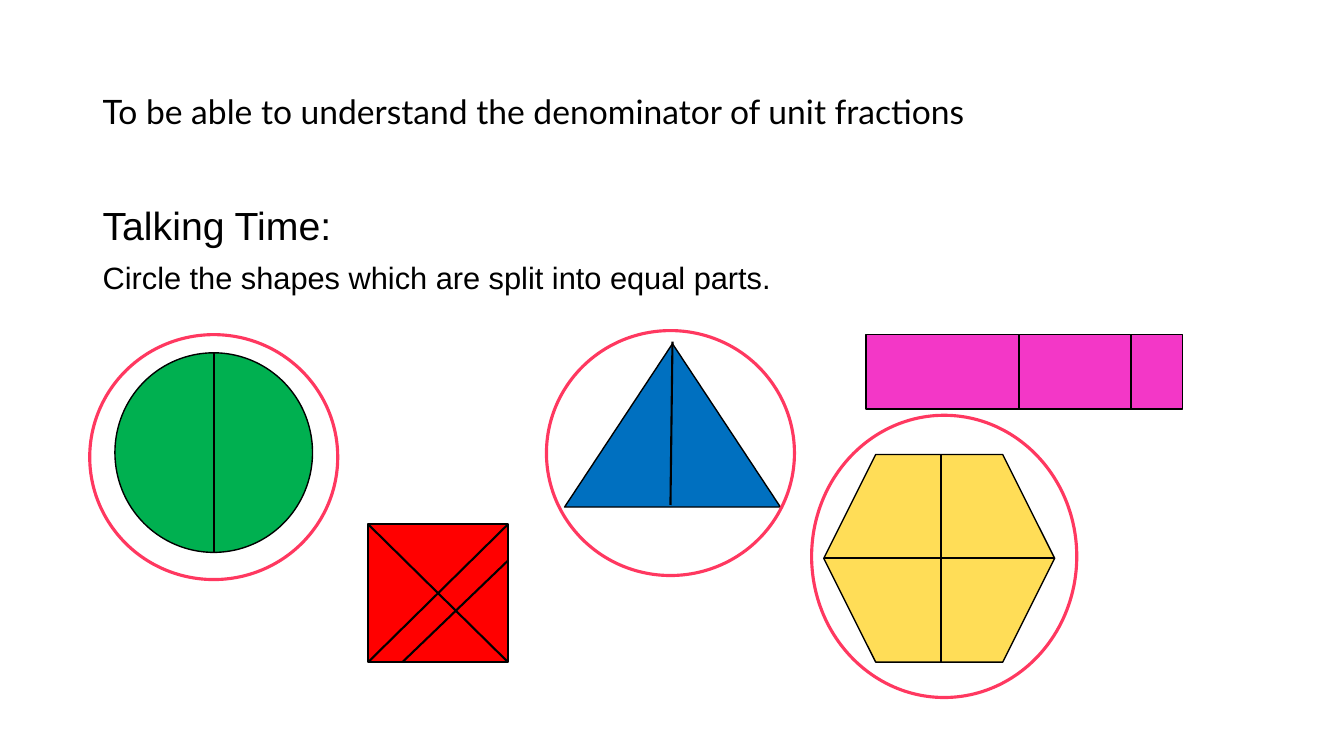
from lxml import etree
from pptx import Presentation
from pptx.dml.color import RGBColor
from pptx.enum.shapes import MSO_CONNECTOR, MSO_SHAPE
from pptx.enum.text import MSO_ANCHOR
from pptx.oxml.ns import qn
from pptx.util import Inches, Pt

BLACK = RGBColor(0x00, 0x00, 0x00)
PINK = RGBColor(0xF3, 0x37, 0xC7)
BLUE = RGBColor(0x00, 0x70, 0xC0)
YELLOW = RGBColor(0xFF, 0xDD, 0x57)
GREEN = RGBColor(0x00, 0xB0, 0x50)
RED = RGBColor(0xFF, 0x00, 0x00)
RING = RGBColor(0xFF, 0x38, 0x60)

SPLIT_SHAPES = [
    (MSO_SHAPE.RECTANGLE, PINK, (8.59, 3.32, 3.14, 0.74),
     [(1.52, 0, 1.52, 0.74), (2.63, 0, 2.63, 0.74)]),
    (MSO_SHAPE.ISOSCELES_TRIANGLE, BLUE, (5.6, 3.41, 2.14, 1.62),
     [(1.07, -0.02, 1.05, 1.6)]),
    (MSO_SHAPE.HEXAGON, YELLOW, (8.17, 4.51, 2.29, 2.06),
     [(1.16, 0, 1.16, 2.06), (0, 1.03, 2.29, 1.03)]),
    (MSO_SHAPE.OVAL, GREEN, (1.14, 3.5, 1.96, 1.98),
     [(0.98, 0, 0.98, 1.98)]),
    (MSO_SHAPE.RECTANGLE, RED, (3.65, 5.2, 1.39, 1.37),
     [(0, 0, 1.39, 1.37), (0, 1.37, 1.39, 0), (0.34, 1.37, 1.39, 0.36)]),
]
ANSWER_RINGS = [
    (0.89, 3.32, 2.46, 2.43),
    (5.42, 3.28, 2.46, 2.43),
    (8.05, 4.12, 2.63, 2.8),
]


def add_text(page, box, lines, font_name, anchor=MSO_ANCHOR.TOP):
    """Place (text, size) lines as paragraphs in the given box."""
    frame = page.shapes.add_textbox(*map(Inches, box)).text_frame
    frame.word_wrap = True
    frame.vertical_anchor = anchor
    for index, (text, size) in enumerate(lines):
        para = frame.add_paragraph() if index else frame.paragraphs[0]
        para.text = text
        para.line_spacing = 0.9
        if index:
            para.space_before = Pt(10)
        font = para.runs[0].font
        font.name, font.size = font_name, Pt(size)
        font.color.rgb = BLACK


def add_outlined(page, kind, box, line_color, line_width):
    """Add an unfilled preset shape with a plain outline."""
    shape = page.shapes.add_shape(kind, *map(Inches, box))
    shape.shadow.inherit = False
    shape.fill.background()
    shape.line.color.rgb = line_color
    shape.line.width = Pt(line_width)
    return shape


def add_split_shape(page, kind, color, box, cuts):
    """Draw a coloured shape and the cuts measured from its top left corner."""
    shape = add_outlined(page, kind, box, BLACK, 1)
    shape.fill.solid()
    shape.fill.fore_color.rgb = color
    left, top = box[:2]
    for x1, y1, x2, y2 in cuts:
        ends = (left + x1, top + y1, left + x2, top + y2)
        cut = page.shapes.add_connector(MSO_CONNECTOR.STRAIGHT, *map(Inches, ends))
        cut.line.color.rgb = BLACK
        cut.line.width = Pt(1.5)
        etree.SubElement(cut._element.spPr, qn("a:effectLst"))


def main():
    """Build and save the fractions slide."""
    deck = Presentation()
    deck.slide_width, deck.slide_height = Inches(13.33), Inches(7.5)
    page = deck.slides.add_slide(deck.slide_layouts[6])
    add_text(page, (0.92, 0.4, 9.6, 1.45),
             [("To be able to understand the denominator of unit fractions", 24)],
             "Lato", MSO_ANCHOR.MIDDLE)
    add_text(page, (0.92, 2, 11.5, 5.1),
             [("Talking Time:", 28),
              ("Circle the shapes which are split into equal parts.", 22)],
             "Arial")
    for kind, color, box, cuts in SPLIT_SHAPES:
        add_split_shape(page, kind, color, box, cuts)
    for box in ANSWER_RINGS:
        add_outlined(page, MSO_SHAPE.OVAL, box, RING, 2.25)
    deck.save("out.pptx")


if __name__ == "__main__":
    main()
